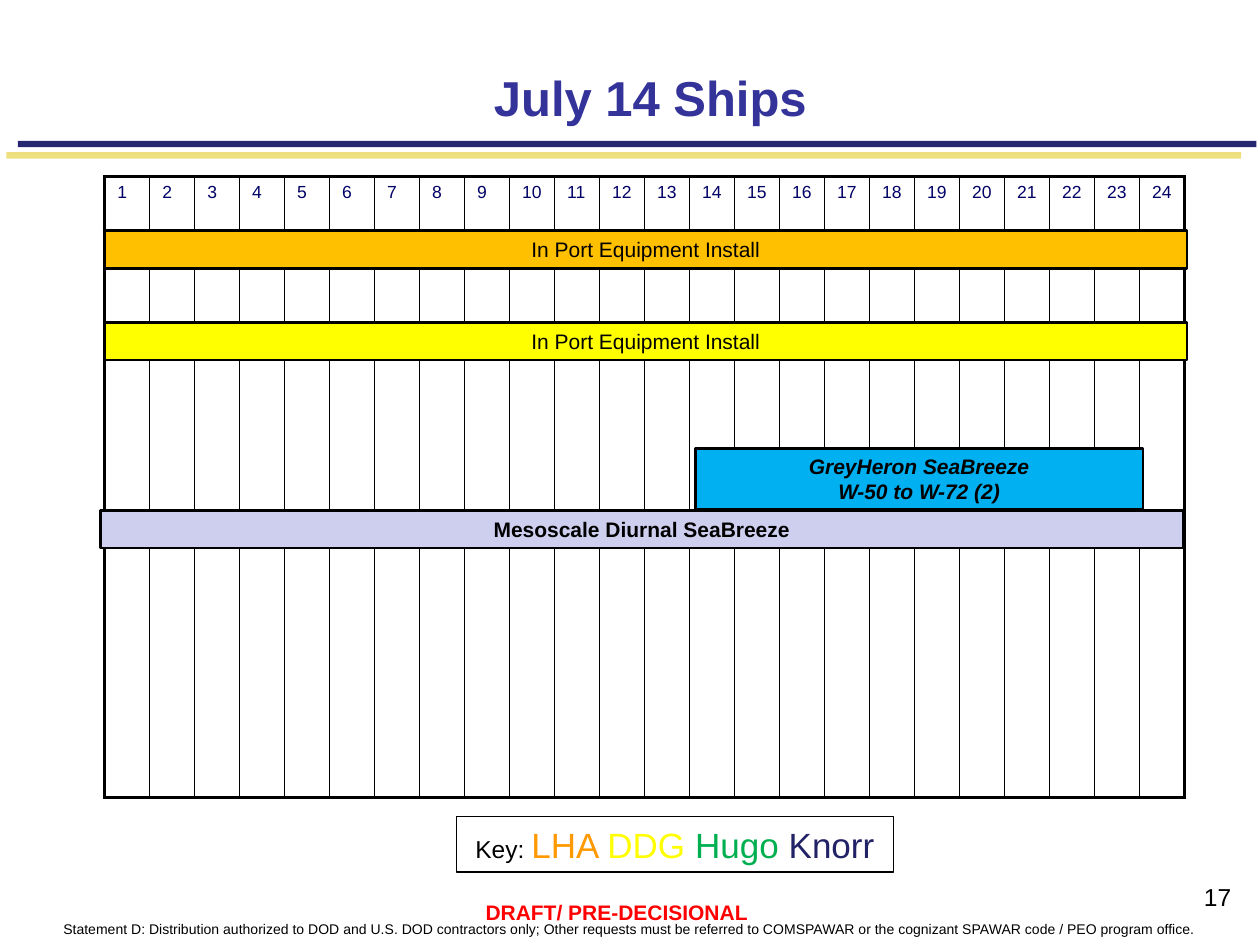
from dataclasses import dataclass

from lxml import etree
from pptx import Presentation
from pptx.dml.color import RGBColor as RGB
from pptx.enum.shapes import MSO_SHAPE as SHAPE
from pptx.enum.text import MSO_ANCHOR as ANCHOR, PP_ALIGN as ALIGN
from pptx.oxml.ns import qn
from pptx.util import Cm, Pt


@dataclass(frozen=True)
class Theme:
    font: str = "Arial"
    black: str = "000000"
    white: str = "FFFFFF"
    title: str = "333399"
    navy: str = "262673"
    gold: str = "EEE07F"
    draft: str = "FF0000"
    day: str = "000066"
    amber: str = "FFC000"
    yellow: str = "FFFF00"
    lilac: str = "CECEEF"
    sky: str = "00B0F0"
    lha: str = "FF9900"
    hugo: str = "00B050"
    knorr: str = "222267"
    title_size: int = 28
    key_size: int = 20
    label_size: int = 14
    body_size: int = 12
    day_size: int = 10
    note_size: int = 8
    frame_width: float = 2.25
    grid_width: float = 1
    bar_width: float = 1.5
    key_width: float = 0.75


class SlideBuilder:
    def __init__(self, prs, theme):
        self.theme = theme
        self.slide = prs.slides.add_slide(prs.slide_layouts[6])

    def style(self, r, size, color, bold=False, italic=False):
        f = r.font
        f.name, f.size, f.bold, f.italic = self.theme.font, Pt(size), bold, italic
        f.color.rgb = RGB.from_string(color)

    def fill_text(self, tf, text, size, color, bold=False, italic=False):
        tf.text = text
        for p in tf.paragraphs:
            p.alignment = ALIGN.CENTER
            for r in p.runs:
                self.style(r, size, color, bold, italic)

    def text(self, box, text, size, color, bold=False, anchor=ANCHOR.MIDDLE, wrap=True):
        tf = self.slide.shapes.add_textbox(*map(Cm, box)).text_frame
        tf.word_wrap = wrap
        tf.vertical_anchor = anchor
        self.fill_text(tf, text, size, color, bold)
        return tf

    def rect(self, box, fill, line_width=None):
        sp = self.slide.shapes.add_shape(SHAPE.RECTANGLE, *map(Cm, box))
        sp.shadow.inherit = False
        sp.fill.solid()
        sp.fill.fore_color.rgb = RGB.from_string(fill)
        if line_width:
            sp.line.color.rgb = RGB.from_string(self.theme.black)
            sp.line.width = Pt(line_width)
        else:
            sp.line.fill.background()
        return sp

    def bar(self, box, text, fill, bold=False, italic=False):
        t = self.theme
        tf = self.rect(box, fill, t.bar_width).text_frame
        tf.word_wrap = True
        self.fill_text(tf, text, t.body_size, t.black, bold, italic)

    def key(self, box, entries):
        tf = self.rect(box, self.theme.white, self.theme.key_width).text_frame
        tf.word_wrap = False
        p = tf.paragraphs[0]
        p.alignment = ALIGN.CENTER
        for text, size, color in entries:
            r = p.add_run()
            r.text = text
            self.style(r, size, color)

    def borders(self, cell, widths):
        tc_pr = cell._tc.get_or_add_tcPr()
        for i, (side, width) in enumerate(zip("LRTB", widths)):
            ln = etree.Element(qn(f"a:ln{side}"), w=str(Pt(width)))
            fill = etree.SubElement(ln, qn("a:solidFill"))
            etree.SubElement(fill, qn("a:srgbClr"), val=self.theme.black)
            tc_pr.insert(i, ln)

    def calendar(self, box, hours, row_heights):
        t = self.theme
        last_row = len(row_heights) - 1
        table = self.slide.shapes.add_table(len(row_heights), hours, *map(Cm, box)).table
        table.first_row = table.horz_banding = False
        for col in table.columns:
            col.width = Cm(box[2] / hours)
        for i, height in enumerate(row_heights):
            table.rows[i].height = Cm(height)
            for j in range(hours):
                cell = table.cell(i, j)
                cell.fill.background()
                outer = (j == 0, j == hours - 1, i == 0, i == last_row)
                self.borders(cell, [t.frame_width if o else t.grid_width for o in outer])
                if i == 0:
                    cell.text_frame.text = str(j + 1)
                    self.style(cell.text_frame.paragraphs[0].runs[0], t.day_size, t.day)


def main():
    prs = Presentation()
    prs.slide_width, prs.slide_height = Cm(25.4), Cm(19.05)
    t = Theme()
    s = SlideBuilder(prs, t)

    s.text((0, 18.44, 25.4, 0.58),
           "Statement D: Distribution authorized to DOD and U.S. DOD contractors only; "
           "Other requests must be referred to COMSPAWAR or the cognizant SPAWAR code / "
           "PEO program office.", t.note_size, t.black)
    s.rect((0.13, 3.07, 24.89, 0.13), t.gold)
    s.rect((0.36, 2.84, 24.97, 0.13), t.navy)
    s.text((23.67, 17.65, 1.75, 1.27), "17", t.label_size, t.black, anchor=ANCHOR.TOP)
    s.text((9.5, 18.01, 5.87, 0.76), "DRAFT/ PRE-DECISIONAL", t.body_size, t.draft,
           bold=True, wrap=False)
    title = s.text((4.88, 1.17, 16.46, 1.37), "July 14 Ships", t.title_size, t.title,
                   bold=True, anchor=ANCHOR.BOTTOM)
    title.margin_top = title.margin_bottom = 0

    s.calendar((2.11, 3.56, 21.79, 12.52), 24, (1.07, 11.45))
    for top, color in ((4.65, t.amber), (6.5, t.yellow)):
        s.bar((2.11, top, 21.82, 0.76), "In Port Equipment Install", color)
    s.key((9.2, 16.46, 8.81, 1.12), (
        ("Key: ", t.label_size, t.black),
        ("LHA ", t.key_size, t.lha),
        ("DDG", t.key_size, t.yellow),
        (" Hugo ", t.key_size, t.hugo),
        ("Knorr", t.key_size, t.knorr),
    ))
    s.bar((2.03, 10.29, 21.82, 0.76), "Mesoscale Diurnal SeaBreeze", t.lilac, bold=True)
    s.bar((14.02, 9.04, 9.02, 1.22), "GreyHeron SeaBreeze\nW-50 to W-72 (2)", t.sky,
          bold=True, italic=True)
    prs.save("out.pptx")


if __name__ == "__main__":
    main()
